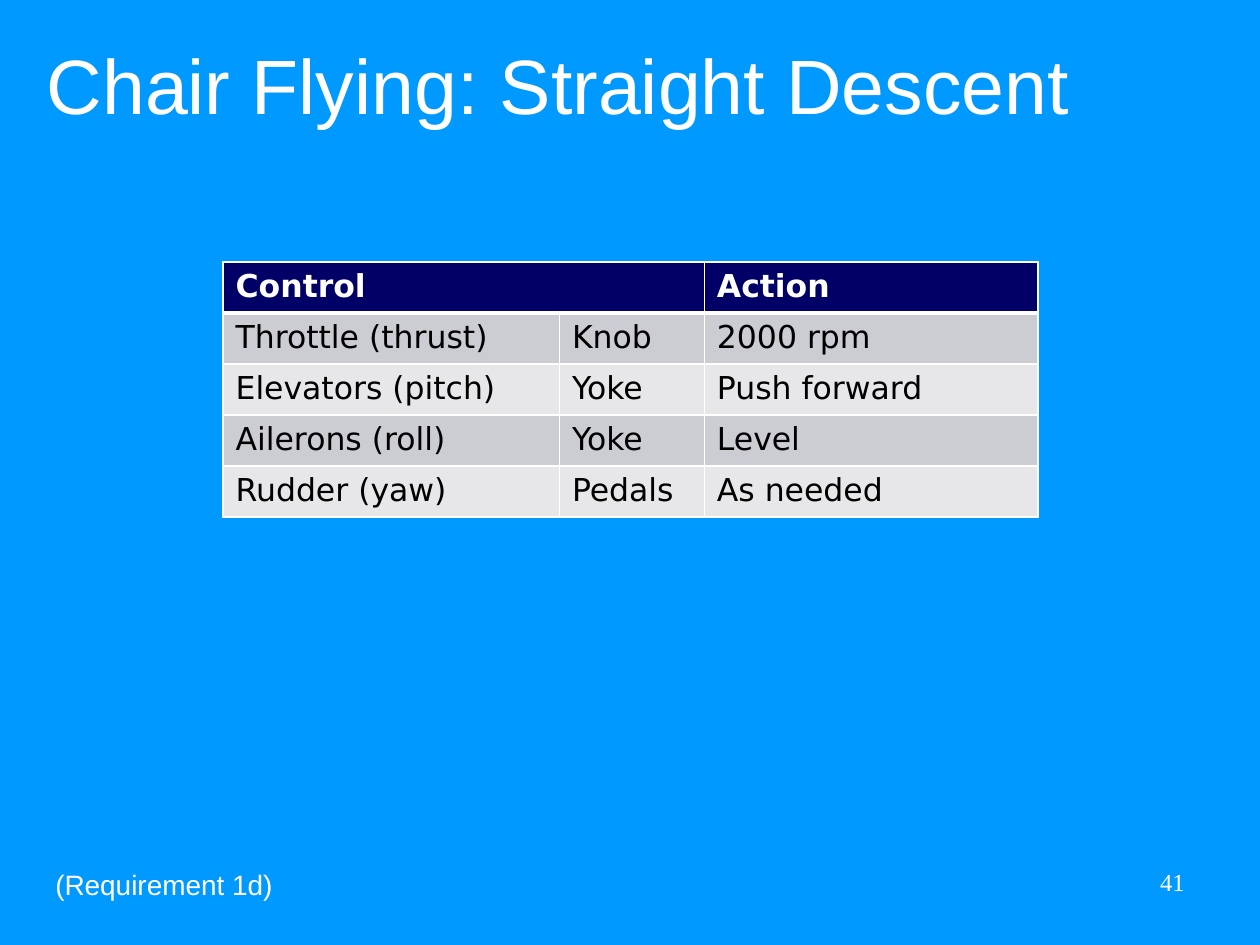
"""Build the straight descent slide with its table of controls and actions."""
from pptx import Presentation
from pptx.dml.color import RGBColor
from pptx.enum.text import MSO_ANCHOR as Anchor, PP_ALIGN as Align
from pptx.oxml import parse_xml
from pptx.oxml.ns import nsdecls
from pptx.util import Inches, Pt

SKY = RGBColor(0x00, 0x99, 0xFF)
NAVY = RGBColor(0x00, 0x00, 0x66)
WHITE = RGBColor(0xFF, 0xFF, 0xFF)
BLACK = RGBColor(0x00, 0x00, 0x00)
DARK_BAND = RGBColor(0xCC, 0xCC, 0xD3)
LIGHT_BAND = RGBColor(0xE7, 0xE7, 0xEA)

ROWS = [
    ("Control", "", "Action"),
    ("Throttle (thrust)", "Knob", "2000 rpm"),
    ("Elevators (pitch)", "Yoke", "Push forward"),
    ("Ailerons (roll)", "Yoke", "Level"),
    ("Rudder (yaw)", "Pedals", "As needed"),
]
COLUMN_WIDTHS = (2.67, 1.15, 2.65)
ROW_HEIGHT = 0.405


def add_text(text_frame, text, font_name, size, color, bold=False, align=Align.LEFT):
    paragraph = text_frame.paragraphs[0]
    paragraph.alignment = align
    run = paragraph.add_run()
    run.text = text
    run.font.name = font_name
    run.font.size = Pt(size)
    run.font.bold = bold
    run.font.color.rgb = color


def add_border(cell, side, points):
    cell._tc.get_or_add_tcPr().append(parse_xml(
        f'<a:ln{side} {nsdecls("a")} w="{Pt(points)}"><a:solidFill>'
        f'<a:srgbClr val="{WHITE}"/></a:solidFill></a:ln{side}>'))


presentation = Presentation()
presentation.slide_width = Inches(10)
presentation.slide_height = Inches(7.5)
slide = presentation.slides.add_slide(presentation.slide_layouts[5])
slide.background.fill.solid()
slide.background.fill.fore_color.rgb = SKY

title = slide.shapes.title
title.left, title.top = Inches(0.27), Inches(0.13)
title.width, title.height = Inches(9.45), Inches(0.95)
title.text_frame.vertical_anchor = Anchor.BOTTOM
add_text(title.text_frame, "Chair Flying: Straight Descent", "Arial", 44, WHITE)

page_number = slide.shapes.add_textbox(Inches(7.17), Inches(6.83), Inches(2.33), Inches(0.52))
page_number.text_frame.word_wrap = True
add_text(page_number.text_frame, "41", "Times New Roman", 14, WHITE, align=Align.RIGHT)

requirement = slide.shapes.add_textbox(Inches(0.34), Inches(6.83), Inches(1.95), Inches(0.37))
requirement.text_frame.word_wrap = False
requirement.text_frame.vertical_anchor = Anchor.MIDDLE
add_text(requirement.text_frame, "(Requirement 1d)", "Arial", 16, WHITE)

table = slide.shapes.add_table(
    len(ROWS), len(COLUMN_WIDTHS), Inches(1.77), Inches(2.08),
    Inches(sum(COLUMN_WIDTHS)), Inches(ROW_HEIGHT * len(ROWS))).table
for column, width in zip(table.columns, COLUMN_WIDTHS):
    column.width = Inches(width)

for row_index, texts in enumerate(ROWS):
    table.rows[row_index].height = Inches(ROW_HEIGHT)
    is_header = row_index == 0
    band = DARK_BAND if row_index % 2 else LIGHT_BAND
    for column_index, text in enumerate(texts):
        cell = table.cell(row_index, column_index)
        add_border(cell, "L", 1)
        add_border(cell, "R", 1)
        add_border(cell, "T", 3 if row_index == 1 else 1)
        add_border(cell, "B", 3 if is_header else 1)
        cell.fill.solid()
        cell.fill.fore_color.rgb = NAVY if is_header else band
        if text:
            add_text(cell.text_frame, text, "DejaVu Sans", 18,
                     WHITE if is_header else BLACK, bold=is_header)
table.cell(0, 0).merge(table.cell(0, 1))

presentation.save("out.pptx")
